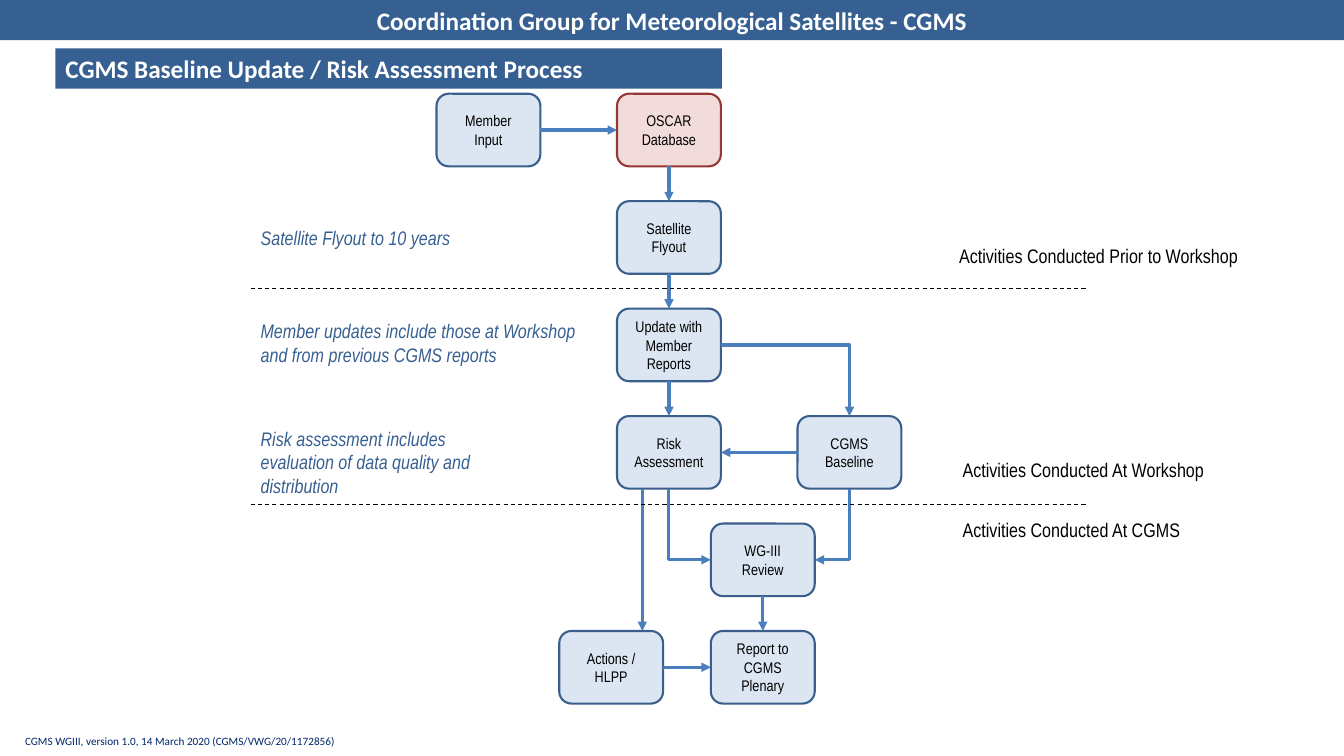
from dataclasses import dataclass
from typing import Optional

from pptx import Presentation
from pptx.dml.color import RGBColor
from pptx.enum.dml import MSO_LINE
from pptx.enum.shapes import MSO_CONNECTOR, MSO_SHAPE
from pptx.enum.text import MSO_ANCHOR, PP_ALIGN
from pptx.oxml.ns import qn
from pptx.oxml.xmlchemy import OxmlElement
from pptx.util import Inches, Pt

RECT, ROUNDED = MSO_SHAPE.RECTANGLE, MSO_SHAPE.ROUNDED_RECTANGLE
STRAIGHT, ELBOW = MSO_CONNECTOR.STRAIGHT, MSO_CONNECTOR.ELBOW
LEFT_ALIGN, CENTER = PP_ALIGN.LEFT, PP_ALIGN.CENTER
TOP_ANCHOR, MIDDLE = MSO_ANCHOR.TOP, MSO_ANCHOR.MIDDLE
DASH = MSO_LINE.DASH
TOP, LEFT, BOTTOM, RIGHT = range(4)


@dataclass(frozen=True)
class Theme:
    heading_font: str = "Calibri"
    body_font: str = "Arial Narrow"
    banner: str = "376092"
    white: str = "FFFFFF"
    black: str = "000000"
    footer: str = "002569"
    step_fill: str = "DCE6F2"
    step_line: str = "3A5F8C"
    source_fill: str = "F2DCDB"
    source_line: str = "953735"
    arrow: str = "4B7EBC"
    heading_size: float = 18
    note_size: float = 14
    step_size: float = 11
    footer_size: float = 8
    step_width: float = 1.5
    arrow_width: float = 2.25
    divider_width: float = 0.75


THEME = Theme()
SLIDE_W, SLIDE_H = 13.33, 7.5
GRID_LEFT, GRID_TOP = 4.33, 0.93
COL_PITCH = 1.79
ROW_PITCH = (6.26 - GRID_TOP) / 5
STEP_W, STEP_H = 1.03, 0.72


@dataclass(frozen=True)
class Step:
    key: str
    text: str
    col: float
    row: float
    fill: str = THEME.step_fill
    line: str = THEME.step_line


@dataclass(frozen=True)
class Flow:
    start: str
    start_side: int
    end: str
    end_side: int
    bent: bool = False
    arrow_at: str = "tailEnd"


@dataclass(frozen=True)
class Note:
    text: str
    col: float
    row: float
    cols: float
    color: str = THEME.black
    italic: bool = False


STEPS = [
    Step("oscar", "OSCAR Database", 1, 0, THEME.source_fill, THEME.source_line),
    Step("input", "Member\nInput", 0, 0),
    Step("baseline", "CGMS Baseline", 2, 3),
    Step("flyout", "Satellite Flyout", 1, 1),
    Step("update", "Update with Member Reports", 1, 2),
    Step("risk", "Risk Assessment", 1, 3),
    Step("review", "WG-III Review", 1.52, 4),
    Step("report", "Report to CGMS Plenary", 1.52, 5),
    Step("actions", "Actions / HLPP", 0.68, 5),
]
FLOWS = [
    Flow("input", RIGHT, "oscar", LEFT),
    Flow("oscar", BOTTOM, "flyout", TOP),
    Flow("flyout", BOTTOM, "update", TOP),
    Flow("update", BOTTOM, "risk", TOP),
    Flow("review", BOTTOM, "report", TOP),
    Flow("baseline", LEFT, "risk", RIGHT),
    Flow("actions", RIGHT, "report", LEFT),
    Flow("update", RIGHT, "baseline", TOP, bent=True),
    Flow("review", LEFT, "risk", BOTTOM, bent=True, arrow_at="headEnd"),
    Flow("review", RIGHT, "baseline", BOTTOM, bent=True, arrow_at="headEnd"),
]
NOTES = [
    Note("Activities Conducted Prior to Workshop", 2.84, 1.35, 1.7),
    Note("Activities Conducted At Workshop", 2.86, 3.34, 1.5),
    Note("Activities Conducted At CGMS", 2.86, 3.9, 1.4),
    Note("Satellite Flyout to 10 years", -1.03, 1.18, 1.29, THEME.banner, True),
    Note("Member updates include those at Workshop and from previous CGMS reports",
         -1.03, 2.05, 1.89, THEME.banner, True),
    Note("Risk assessment includes evaluation of data quality and distribution",
         -1.03, 3.05, 1.29, THEME.banner, True),
]
DIVIDER_ROWS = (1.81, 3.82)
DIVIDER_COLS = (-1.03, 3.6)


def col_x(col: float) -> int:
    return Inches(GRID_LEFT + col * COL_PITCH)


def row_y(row: float) -> int:
    return Inches(GRID_TOP + row * ROW_PITCH)


def write_text(holder, text: str, *, size: float, color: str, font: str = THEME.body_font,
               bold: bool = False, italic: bool = False, align=LEFT_ALIGN,
               anchor=TOP_ANCHOR, inset_x: float = 0.1, inset_y: float = 0.05) -> None:
    frame = holder.text_frame
    frame.word_wrap = True
    frame.vertical_anchor = anchor
    frame.margin_left = frame.margin_right = Inches(inset_x)
    frame.margin_top = frame.margin_bottom = Inches(inset_y)
    frame.text = text
    for paragraph in frame.paragraphs:
        paragraph.alignment = align
        paragraph.font.name = font
        paragraph.font.size = Pt(size)
        paragraph.font.bold = bold
        paragraph.font.italic = italic
        paragraph.font.color.rgb = RGBColor.from_string(color)


def add_block(slide, kind, x: int, y: int, w: int, h: int, fill: str,
              line: Optional[str] = None):
    block = slide.shapes.add_shape(kind, x, y, w, h)
    block.shadow.inherit = False
    block.fill.solid()
    block.fill.fore_color.rgb = RGBColor.from_string(fill)
    if line is None:
        block.line.fill.background()
    else:
        block.line.color.rgb = RGBColor.from_string(line)
        block.line.width = Pt(THEME.step_width)
    return block


def add_banner(slide, text: str, x: float, y: float, w: float, align) -> None:
    banner = add_block(slide, RECT, Inches(x * SLIDE_W), Inches(y * SLIDE_H),
                       Inches(w * SLIDE_W), Inches(0.4), THEME.banner)
    write_text(banner, text, size=THEME.heading_size, color=THEME.white,
               font=THEME.heading_font, bold=True, align=align, anchor=MIDDLE)


def add_step(slide, step: Step):
    box = add_block(slide, ROUNDED, col_x(step.col), row_y(step.row),
                    Inches(STEP_W), Inches(STEP_H), step.fill, step.line)
    write_text(box, step.text, size=THEME.step_size, color=THEME.black,
               align=CENTER, anchor=MIDDLE, inset_x=0.12, inset_y=0)
    return box


def add_line(slide, x1: int, y1: int, x2: int, y2: int, color: str, width: float,
             kind=STRAIGHT, arrow_at: Optional[str] = None):
    connector = slide.shapes.add_connector(kind, x1, y1, x2, y2)
    connector.line.color.rgb = RGBColor.from_string(color)
    connector.line.width = Pt(width)
    properties = connector._element.spPr
    properties.append(OxmlElement("a:effectLst"))
    if kind == ELBOW:
        properties.find(qn("a:prstGeom")).set("prst", "bentConnector2")
    if arrow_at:
        arrowhead = OxmlElement(f"a:{arrow_at}")
        arrowhead.set("type", "triangle")
        properties.find(qn("a:ln")).append(arrowhead)
    return connector


def add_flow(slide, flow: Flow, boxes: dict) -> None:
    connector = add_line(slide, *side_middle(boxes[flow.start], flow.start_side),
                         *side_middle(boxes[flow.end], flow.end_side),
                         THEME.arrow, THEME.arrow_width,
                         ELBOW if flow.bent else STRAIGHT, flow.arrow_at)
    connector.begin_connect(boxes[flow.start], flow.start_side)
    connector.end_connect(boxes[flow.end], flow.end_side)


def side_middle(box, side: int) -> tuple[int, int]:
    across = {LEFT: 0, RIGHT: box.width}.get(side, box.width // 2)
    down = {TOP: 0, BOTTOM: box.height}.get(side, box.height // 2)
    return box.left + across, box.top + down


def add_note(slide, note: Note) -> None:
    label = slide.shapes.add_textbox(col_x(note.col), row_y(note.row),
                                     Inches(note.cols * COL_PITCH), Inches(0.34))
    write_text(label, note.text, size=THEME.note_size, color=note.color, italic=note.italic)


def main() -> None:
    deck = Presentation()
    deck.slide_width, deck.slide_height = Inches(SLIDE_W), Inches(SLIDE_H)
    slide = deck.slides.add_slide(deck.slide_layouts[6])
    add_banner(slide, "Coordination Group for Meteorological Satellites - CGMS", 0, 0, 1, CENTER)
    add_banner(slide, "CGMS Baseline Update / Risk Assessment Process",
               0.55 / SLIDE_W, 0.48 / SLIDE_H, 6.61 / SLIDE_W, LEFT_ALIGN)
    boxes = {step.key: add_step(slide, step) for step in STEPS}
    for flow in FLOWS:
        add_flow(slide, flow, boxes)
    actions_x = col_x(1.14)
    add_line(slide, actions_x, boxes["risk"].top + boxes["risk"].height, actions_x,
             boxes["actions"].top, THEME.arrow, THEME.arrow_width, arrow_at="tailEnd")
    for row in DIVIDER_ROWS:
        divider = add_line(slide, col_x(DIVIDER_COLS[0]), row_y(row), col_x(DIVIDER_COLS[1]),
                           row_y(row), THEME.black, THEME.divider_width)
        divider.line.dash_style = DASH
    for note in NOTES:
        add_note(slide, note)
    footer = slide.shapes.add_textbox(Inches(0.15), Inches(7.24), Inches(5.26), Inches(0.24))
    write_text(footer, "CGMS WGIII, version 1.0, 14 March 2020 (CGMS/VWG/20/1172856)",
               size=THEME.footer_size, color=THEME.footer, font=THEME.heading_font)
    deck.save("out.pptx")


if __name__ == "__main__":
    main()
